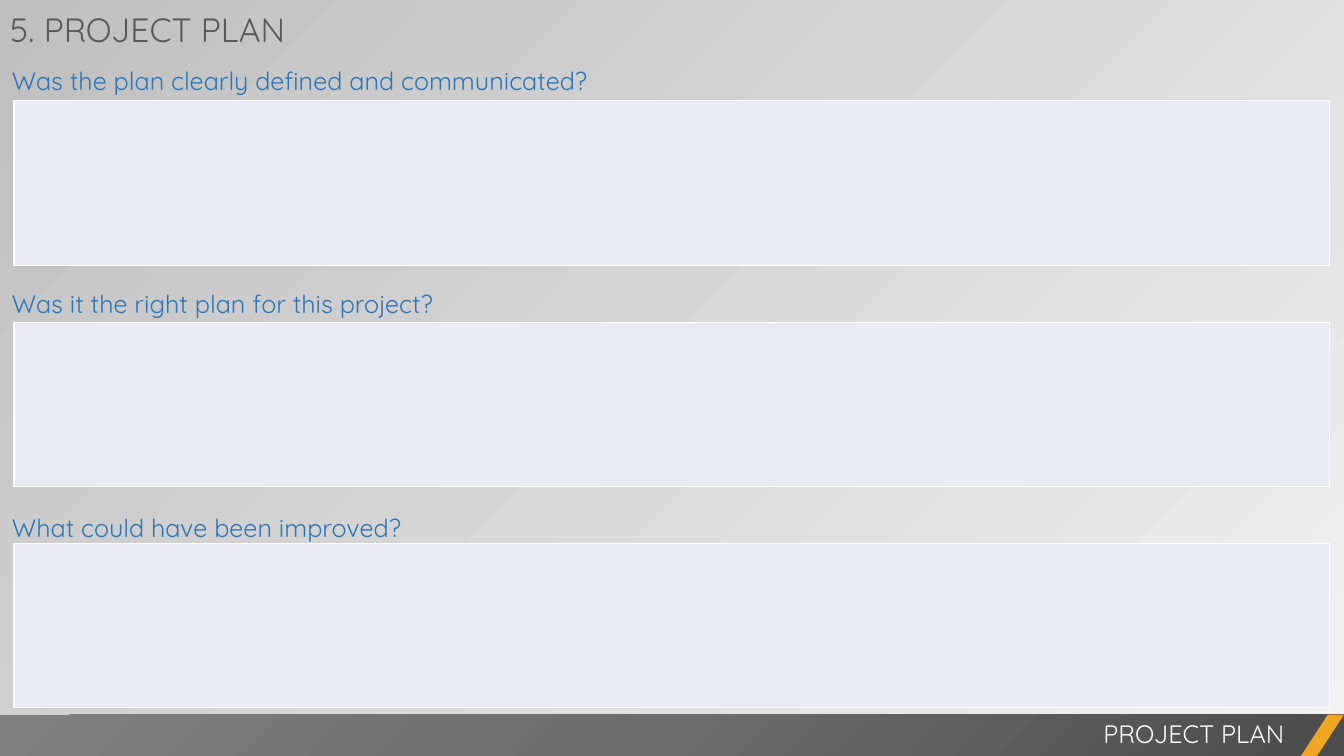
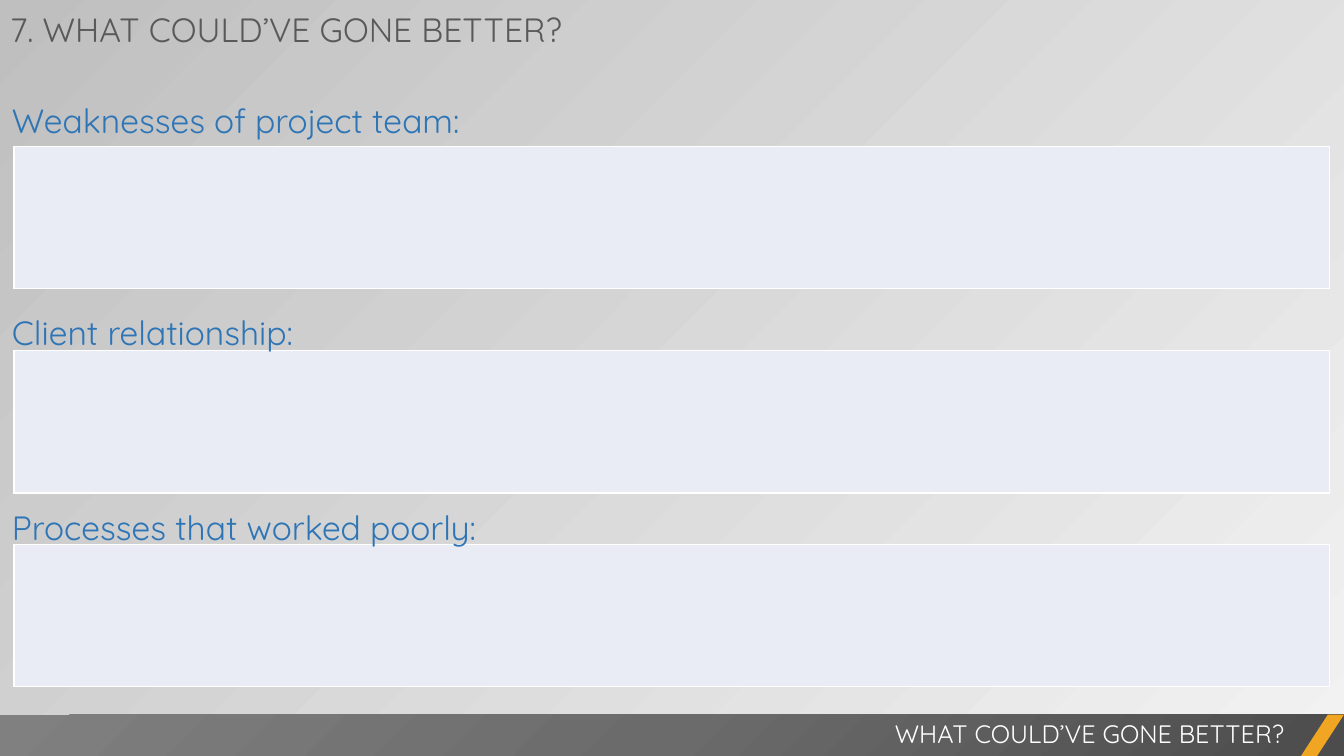
from dataclasses import dataclass

from lxml import etree
from pptx import Presentation
from pptx.dml.color import RGBColor as RGB
from pptx.enum.shapes import MSO_SHAPE as Form
from pptx.enum.text import MSO_ANCHOR as Anchor, MSO_AUTO_SIZE as Fit, PP_ALIGN as Align
from pptx.oxml import parse_xml
from pptx.oxml.ns import qn
from pptx.presentation import Presentation as Deck
from pptx.slide import Slide
from pptx.text.text import TextFrame
from pptx.util import Pt


@dataclass(frozen=True)
class Theme:
    font: str = "Quicksand"
    light: str = "F2F2F2"
    shade: str = "BFBFBF"
    title: str = "595959"
    label: str = "2E75B6"
    cell: str = "E9EBF5"
    white: str = "FFFFFF"
    slash: str = "F0A622"
    band: tuple[str, ...] = ("4C4C4C", "6B6B6B", "808080")
    head: float = 24
    foot: float = 18


@dataclass(frozen=True)
class Box:
    left: float
    top: float
    width: float
    height: float

    def place(self) -> tuple[Pt, Pt, Pt, Pt]:
        return Pt(self.left), Pt(self.top), Pt(self.width), Pt(self.height)


@dataclass(frozen=True)
class Prompt:
    text: str
    top: float
    height: float
    field: float  # top of the answer field
    lead: Pt | float  # line spacing, fixed or relative


@dataclass(frozen=True)
class Page:
    number: int
    name: str
    width: float  # width of the title
    size: float  # type size of the prompts
    depth: float  # height of the answer fields
    prompts: tuple[Prompt, ...]


THEME = Theme()
WIDE, HIGH = 960, 540
BAND = Box(0, 510.5, WIDE, 30)
SLASH = Box(929, 510.5, 31, 30)
TIGHT = Pt(21.5)

PAGES = (
    Page(5, "PROJECT PLAN", 214.5, 18, 117.4, (
        Prompt("Was the plan clearly defined and communicated?", 42.5, 29.5, 72, TIGHT),
        Prompt("Was it the right plan for this project?", 201.6, 29.5, 230.4, TIGHT),
        Prompt("What could have been improved?", 357.1, 32.4, 388.1, 1.2),
    )),
    Page(7, "WHAT COULD’VE GONE BETTER?", 417, 24, 101.5, (
        Prompt("Weaknesses of project team:", 74.2, 31.7, 104.4, TIGHT),
        Prompt("Client relationship:", 212.4, 41, 250.6, 1.2),
        Prompt("Processes that worked poorly:", 352.1, 41, 388.8, 1.2),
    )),
)


def write(frame: TextFrame, text: str, size: float, color: str,
          align: Align = Align.LEFT, wrap: bool = True,
          side: float = 7.2, edge: float = 3.6) -> None:
    """Fill a frame with one styled line."""
    frame.text = text
    frame.word_wrap = wrap
    frame.auto_size = Fit.SHAPE_TO_FIT_TEXT
    frame.vertical_anchor = Anchor.TOP
    frame.margin_left = frame.margin_right = Pt(side)
    frame.margin_top = frame.margin_bottom = Pt(edge)
    line = frame.paragraphs[0]
    line.alignment = align
    font = line.runs[0].font
    font.name, font.size = THEME.font, Pt(size)
    font.color.rgb = RGB.from_string(color)


def paint(slide: Slide) -> None:
    """Lay the grey gradient behind the slide."""
    fill = slide.background.fill
    fill.gradient()
    fill.gradient_angle = 135
    for stop, color in zip(fill.gradient_stops, (THEME.light, THEME.shade)):
        stop.color.rgb = RGB.from_string(color)


def add_field(slide: Slide, box: Box) -> None:
    """Add an empty answer field as a table of one cell."""
    table = slide.shapes.add_table(1, 1, *box.place()).table
    table.first_row = table.horz_banding = False
    cell = table.cell(0, 0)
    props = cell._tc.get_or_add_tcPr()
    for side in ("lnL", "lnR", "lnT", "lnB"):
        line = etree.SubElement(props, qn(f"a:{side}"), w=str(Pt(1)))
        solid = etree.SubElement(line, qn("a:solidFill"))
        etree.SubElement(solid, qn("a:srgbClr"), val=THEME.white)
    cell.fill.solid()
    cell.fill.fore_color.rgb = RGB.from_string(THEME.cell)


def add_prompt(slide: Slide, page: Page, prompt: Prompt) -> None:
    """Add a question and the field below it."""
    add_field(slide, Box(10, prompt.field, 939.6, page.depth))
    box = Box(0, prompt.top, 549.4, prompt.height)
    frame = slide.shapes.add_textbox(*box.place()).text_frame
    write(frame, prompt.text, page.size, THEME.label, side=8.6, edge=4.3)
    line = frame.paragraphs[0]
    line.line_spacing = prompt.lead
    line.space_before = Pt(0.2 * page.size)


def add_foot(slide: Slide, text: str) -> None:
    """Add the dark band, its slash and the section name."""
    band = slide.shapes.add_shape(Form.RECTANGLE, *BAND.place())
    slash = slide.shapes.add_shape(Form.PARALLELOGRAM, *SLASH.place())
    slash.adjustments[0] = 0.65
    for shape in (band, slash):
        shape.shadow.inherit = False
        shape.line.fill.background()
    slash.fill.solid()
    slash.fill.fore_color.rgb = RGB.from_string(THEME.slash)

    # Radial gradient from the lower right corner
    stops = "".join(f'<a:gs pos="{i * 50000}"><a:srgbClr val="{color}"/></a:gs>'
                    for i, color in enumerate(THEME.band))
    band.fill.gradient()
    old = band._element.spPr.find(qn("a:gradFill"))
    old.getparent().replace(old, parse_xml(
        '<a:gradFill xmlns:a="http://schemas.openxmlformats.org/drawingml/2006/main" '
        f'rotWithShape="1"><a:gsLst>{stops}</a:gsLst><a:path path="circle">'
        '<a:fillToRect l="100000" t="100000"/></a:path></a:gradFill>'))

    note = slide.shapes.add_textbox(*Box(28.8, 509.8, 895.7, 29).place())
    write(note.text_frame, text, THEME.foot, THEME.white, Align.RIGHT)


def add_title(slide: Slide, page: Page) -> None:
    """Move and format the title placeholder."""
    title = slide.shapes.title
    title.left, title.top, title.width, title.height = Box(0, 2.9, page.width, 36).place()
    write(title.text_frame, f"{page.number}. {page.name}", THEME.head, THEME.title, wrap=False)


def add_page(deck: Deck, page: Page) -> None:
    """Build one slide."""
    slide = deck.slides.add_slide(deck.slide_layouts[5])
    paint(slide)
    for prompt in page.prompts:
        add_prompt(slide, page, prompt)
    add_foot(slide, page.name)
    add_title(slide, page)


def main() -> None:
    deck = Presentation()
    deck.slide_width, deck.slide_height = Pt(WIDE), Pt(HIGH)
    for page in PAGES:
        add_page(deck, page)
    deck.save("out.pptx")


if __name__ == "__main__":
    main()
